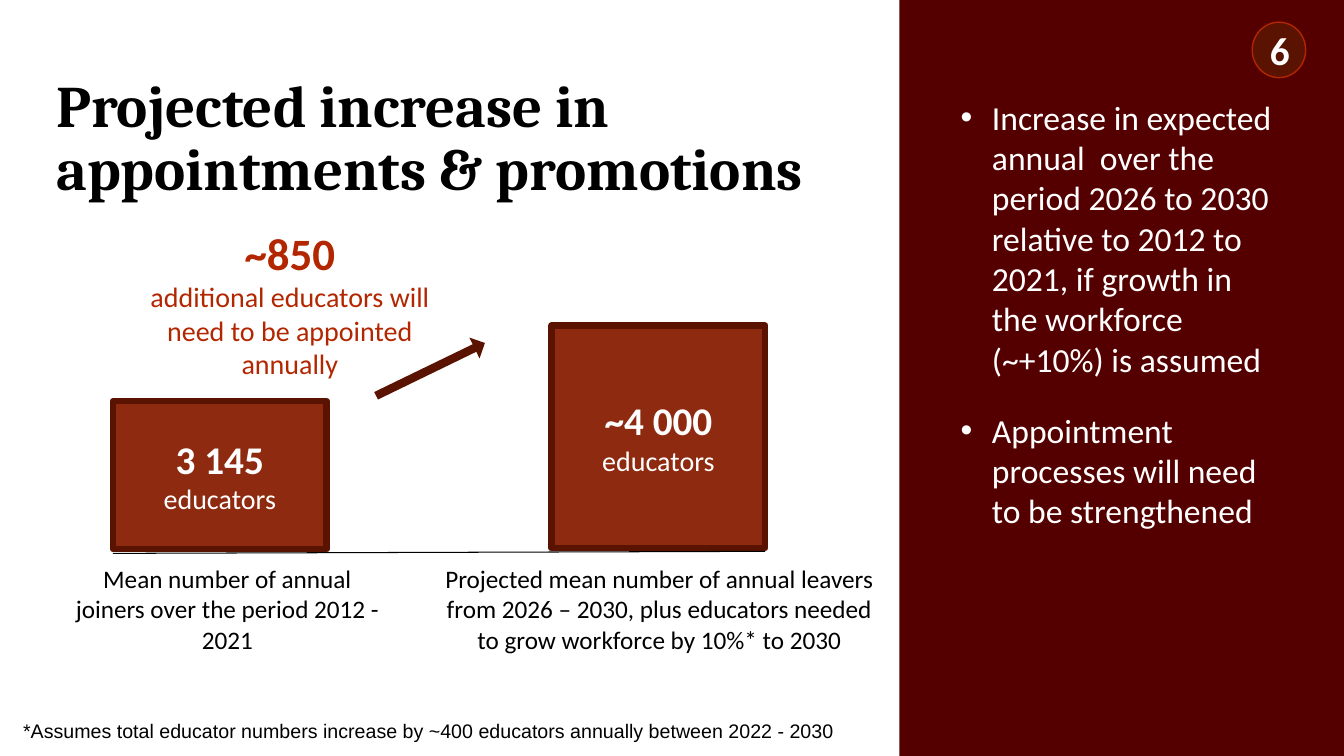
from lxml import etree
from pptx import Presentation
from pptx.dml.color import RGBColor
from pptx.enum.shapes import MSO_CONNECTOR as CONN, MSO_SHAPE as SHAPE
from pptx.enum.text import MSO_ANCHOR as ANCHOR, PP_ALIGN as ALIGN
from pptx.oxml.ns import qn
from pptx.util import Inches, Pt

WHITE, BLACK = "FFFFFF", "000000"
MAROON, BROWN, RUST, ORANGE = "550000", "591300", "861D00", "B22600"


def rgb(value):
    """Turn a hex string into a colour."""
    return RGBColor.from_string(value)


def write(s, lines, color, font="Calibri", align=ALIGN.CENTER, anchor=ANCHOR.MIDDLE):
    """Write (text, size, bold) lines into a shape, one paragraph each."""
    tf = s.text_frame
    tf.word_wrap = True
    tf.vertical_anchor = anchor
    for i, (text, size, bold) in enumerate(lines):
        p = tf.add_paragraph() if i else tf.paragraphs[0]
        p.text = text
        p.alignment = align
        p.font.name, p.font.size, p.font.bold = font, Pt(size), bold
        p.font.color.rgb = rgb(color)
    return tf


def add_text(sp, box, lines, color=BLACK, **style):
    """Add a text box."""
    s = sp.add_textbox(*map(Inches, box))
    return write(s, lines, color, **style)


def add_block(sp, kind, box, fill, line=None, width=1):
    """Add a flat preset shape."""
    s = sp.add_shape(kind, *map(Inches, box))
    s.shadow.inherit = False
    s.fill.solid()
    s.fill.fore_color.rgb = rgb(fill)
    if line:
        s.line.color.rgb = rgb(line)
        s.line.width = Pt(width)
    else:
        s.line.fill.background()
    return s


def add_bar(sp, left, top, height, number):
    """Add a slightly transparent bar labelled with a number of educators."""
    s = add_block(sp, SHAPE.RECTANGLE, (left, top, 2.12, height), RUST, BROWN, 4.5)
    color = s.fill._xPr.find(qn("a:solidFill"))[0]
    etree.SubElement(color, qn("a:alpha")).set("val", "94000")
    write(s, [(number, 28, True), ("educators", 20, False)], WHITE)


def add_bullets(sp, box, items):
    """Add a white bulleted list."""
    tf = add_text(sp, box, [(item, 24, False) for item in items], WHITE,
                  align=ALIGN.LEFT, anchor=ANCHOR.TOP)
    for i, p in enumerate(tf.paragraphs):
        p.space_before = Pt(22 if i else 0)
        pPr = p._p.get_or_add_pPr()
        pPr.set("marL", str(Inches(0.31)))
        pPr.set("indent", str(-Inches(0.31)))
        font = etree.Element(qn("a:buFont"), typeface="Arial")
        bullet = etree.Element(qn("a:buChar"), char="•")
        at = pPr.index(pPr.find(qn("a:defRPr")))
        pPr[at:at] = [font, bullet]


def add_line(sp, start, end):
    """Add a thin black line."""
    s = sp.add_connector(CONN.STRAIGHT, *map(Inches, start + end))
    s.line.color.rgb = rgb(BLACK)
    s.line.width = Pt(0.75)
    etree.SubElement(s._element.spPr, qn("a:effectLst"))


def main():
    """Build the slide."""
    prs = Presentation()
    prs.slide_width, prs.slide_height = Inches(13.33), Inches(7.5)
    sp = prs.slides.add_slide(prs.slide_layouts[6]).shapes

    add_block(sp, SHAPE.RECTANGLE, (8.92, 0, 4.41, 7.5), MAROON)
    title = add_text(sp, (0.46, 0.87, 7.96, 1.04),
                     [("Projected increase in appointments & promotions", 42, True)],
                     font="Cambria", align=ALIGN.LEFT)
    title.paragraphs[0].line_spacing = 0.9
    add_bullets(sp, (9.43, 0.91, 3.32, 6.01), [
        "Increase in expected annual  over the period 2026 to 2030 relative to "
        "2012 to 2021, if growth in the workforce (~+10%) is assumed",
        "Appointment processes will need to be strengthened",
    ])
    badge = add_block(sp, SHAPE.OVAL, (12.42, 0.22, 0.53, 0.55), BROWN, ORANGE)
    write(badge, [("6", 28, True)], WHITE)

    add_text(sp, (1.2, 2.2, 3.35, 1.61), [
        ("~850", 32, True),
        ("additional educators will", 20, False),
        ("need to be appointed", 20, False),
        ("annually", 20, False),
    ], ORANGE)
    captions = [
        (0.6, 3.31, "Mean number of annual joiners over the period 2012 - 2021"),
        (4.21, 4.66, "Projected mean number of annual leavers from 2026 – 2030, "
                     "plus educators needed to grow workforce by 10%* to 2030"),
    ]
    for left, width, text in captions:
        add_text(sp, (left, 5.54, width, 1.06), [(text, 18, False)], anchor=ANCHOR.TOP)

    add_bar(sp, 1.12, 3.98, 1.47, "3 145")
    add_bar(sp, 5.47, 3.23, 2.21, "~4 000")
    arrow = add_block(sp, SHAPE.RIGHT_ARROW, (3.67, 3.55, 1.2, 0.23), BROWN)
    arrow.adjustments[0] = 0.36
    arrow.rotation = 334.1
    add_line(sp, (1.12, 5.49), (7.59, 5.47))
    add_text(sp, (0.13, 7.11, 8.29, 0.27),
             [("*Assumes total educator numbers increase by ~400 educators annually "
               "between 2022 - 2030", 14, False)], font="Arial", align=ALIGN.LEFT)
    prs.save("out.pptx")


if __name__ == "__main__":
    main()
